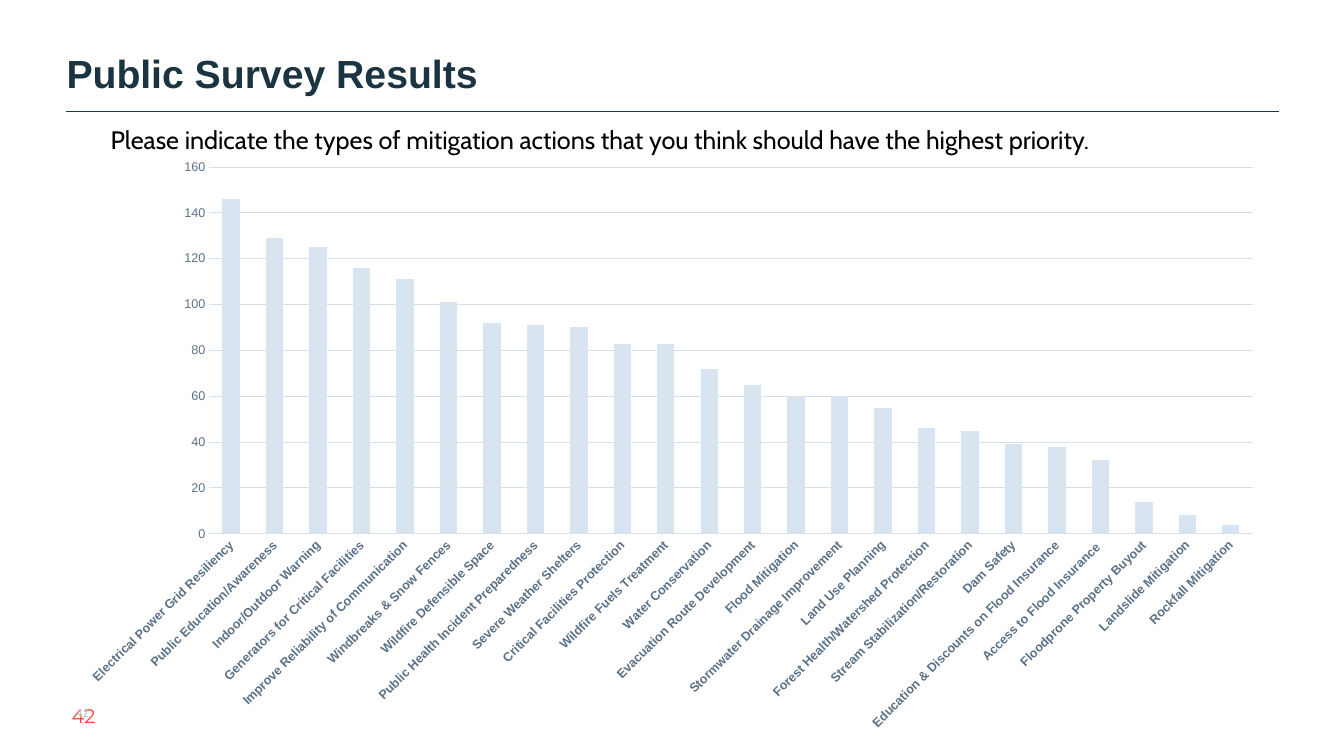
from dataclasses import dataclass

import pptx
import pptx.chart.data
import pptx.dml.color
import pptx.enum.chart
import pptx.enum.shapes
import pptx.enum.text
import pptx.oxml
import pptx.oxml.ns
import pptx.util
from pptx.util import Pt


@dataclass(frozen=True)
class Theme:
    title: str = "1A3441"
    rule: str = "233845"
    text: str = "000000"
    page: str = "F7413A"
    faint: str = "BFBFBF"
    axis: str = "5B7187"
    grid: str = "D8DEE5"
    bar: str = "D8E5F0"
    chart_text: str = "1D242B"
    heading_font: str = "Arial"
    body_font: str = "Cabin"
    page_font: str = "Montserrat"
    title_size: int = 28
    question_size: int = 18
    page_size: int = 14
    chart_size: int = 10
    axis_size: int = 9
    small_size: int = 8


THEME = Theme()
ALIGN = pptx.enum.text.PP_ALIGN
ANCHOR = pptx.enum.text.MSO_ANCHOR

PRIORITIES = [
    ("Electrical Power Grid Resiliency", 146),
    ("Public Education/Awareness", 129),
    ("Indoor/Outdoor Warning", 125),
    ("Generators for Critical Facilities", 116),
    ("Improve Reliability of Communication", 111),
    ("Windbreaks & Snow Fences", 101),
    ("Wildfire Defensible Space", 92),
    ("Public Health Incident Preparedness", 91),
    ("Severe Weather Shelters", 90),
    ("Critical Facilities Protection", 83),
    ("Wildfire Fuels Treatment", 83),
    ("Water Conservation", 72),
    ("Evacuation Route Development", 65),
    ("Flood Mitigation", 60),
    ("Stormwater Drainage Improvement", 60),
    ("Land Use Planning", 55),
    ("Forest Health/Watershed Protection", 46),
    ("Stream Stabilization/Restoration", 45),
    ("Dam Safety", 39),
    ("Education & Discounts on Flood Insurance", 38),
    ("Access to Flood Insurance ", 32),
    ("Floodprone Property Buyout", 14),
    ("Landslide Mitigation", 8),
    ("Rockfall Mitigation", 4),
]


def rgb(color):
    return pptx.dml.color.RGBColor.from_string(color)


def set_font(font, name, size, color, bold=False):
    font.name, font.size, font.bold = name, Pt(size), bold
    font.color.rgb = rgb(color)


def add_text(s, box, text, name, size, color, bold=False,
             align=ALIGN.LEFT, anchor=ANCHOR.TOP):
    sp = s.shapes.add_textbox(*map(Pt, box))
    tf = sp.text_frame
    tf.word_wrap = True
    tf.vertical_anchor = anchor
    p = tf.paragraphs[0]
    p.text, p.alignment = text, align
    set_font(p.font, name, size, color, bold)
    return tf


def add_title(s, box, text):
    tf = add_text(s, box, text, THEME.heading_font, THEME.title_size,
                  THEME.title, bold=True, anchor=ANCHOR.BOTTOM)
    tf.margin_left = tf.margin_right = tf.margin_top = tf.margin_bottom = 0
    tf.paragraphs[0].line_spacing = 1.2
    tf.paragraphs[0].space_before = Pt(10)


def add_rule(s, left, right, y):
    line = s.shapes.add_connector(pptx.enum.shapes.MSO_CONNECTOR.STRAIGHT,
                                  Pt(left), Pt(y), Pt(right), Pt(y))
    line.line.color.rgb = rgb(THEME.rule)
    line.line.width = Pt(0.5)
    line._element.spPr.append(pptx.oxml.parse_xml(
        f"<a:effectLst {pptx.oxml.ns.nsdecls('a')}/>"))


def place_plot(chart, **fractions):
    """Fix the inner plot area, as fractions of the chart's size."""
    area = chart._chartSpace.chart.plotArea
    for old in area.xpath("./c:layout"):
        area.remove(old)
    values = "".join(f'<c:{k} val="{v}"/>' for k, v in fractions.items())
    area.insert(0, pptx.oxml.parse_xml(
        f"<c:layout {pptx.oxml.ns.nsdecls('c')}><c:manualLayout>"
        '<c:layoutTarget val="inner"/><c:xMode val="edge"/><c:yMode val="edge"/>'
        f"{values}</c:manualLayout></c:layout>"))


def style_axis(axis, bold=False):
    axis.major_tick_mark = axis.minor_tick_mark = pptx.enum.chart.XL_TICK_MARK.NONE
    axis.format.line.fill.background()
    set_font(axis.tick_labels.font, THEME.heading_font, THEME.axis_size,
             THEME.axis, bold)


def add_priority_chart(s, box):
    data = pptx.chart.data.CategoryChartData()
    data.categories = [name for name, _ in PRIORITIES]
    data.add_series("Series 1", [votes for _, votes in PRIORITIES])
    chart = s.shapes.add_chart(pptx.enum.chart.XL_CHART_TYPE.COLUMN_CLUSTERED,
                               *map(Pt, box), data).chart
    chart.has_legend = chart.has_title = False
    set_font(chart.font, THEME.heading_font, THEME.chart_size, THEME.chart_text)
    place_plot(chart, x=0.118, y=0.032, w=0.861, h=0.618)

    plot = chart.plots[0]
    plot.gap_width, plot.vary_by_categories = 150, False
    fill = plot.series[0].format.fill
    fill.solid()
    fill.fore_color.rgb = rgb(THEME.bar)

    style_axis(chart.category_axis, bold=True)
    body = chart.category_axis._element.xpath("./c:txPr/a:bodyPr")[0]
    body.set("rot", str(-45 * 60000))

    votes = chart.value_axis
    style_axis(votes)
    votes.minimum_scale, votes.maximum_scale, votes.major_unit = 0, 160, 20
    votes.has_major_gridlines = True
    grid = votes.major_gridlines.format.line
    grid.color.rgb = rgb(THEME.grid)
    grid.width = Pt(0.75)


def main():
    prs = pptx.Presentation()
    prs.slide_width, prs.slide_height = Pt(960), Pt(540)
    s = prs.slides.add_slide(prs.slide_layouts[6])

    add_text(s, (0, 496.8, 119.5, 28.8), "42", THEME.page_font, THEME.page_size,
             THEME.page, align=ALIGN.CENTER, anchor=ANCHOR.MIDDLE)
    add_rule(s, 47, 913.7, 79.2)
    add_title(s, (47.5, 20.9, 646.6, 48.2), "Public Survey Results")
    add_text(s, (47.5, 499, 53.3, 20.2), "42", THEME.body_font, THEME.small_size,
             THEME.faint, anchor=ANCHOR.MIDDLE)
    add_priority_chart(s, (47.5, 105.8, 865.4, 424))
    add_text(s, (72, 85, 825.8, 28.8),
             "Please indicate the types of mitigation actions that you think "
             "should have the highest priority.",
             THEME.body_font, THEME.question_size, THEME.text)
    prs.save("out.pptx")


if __name__ == "__main__":
    main()
